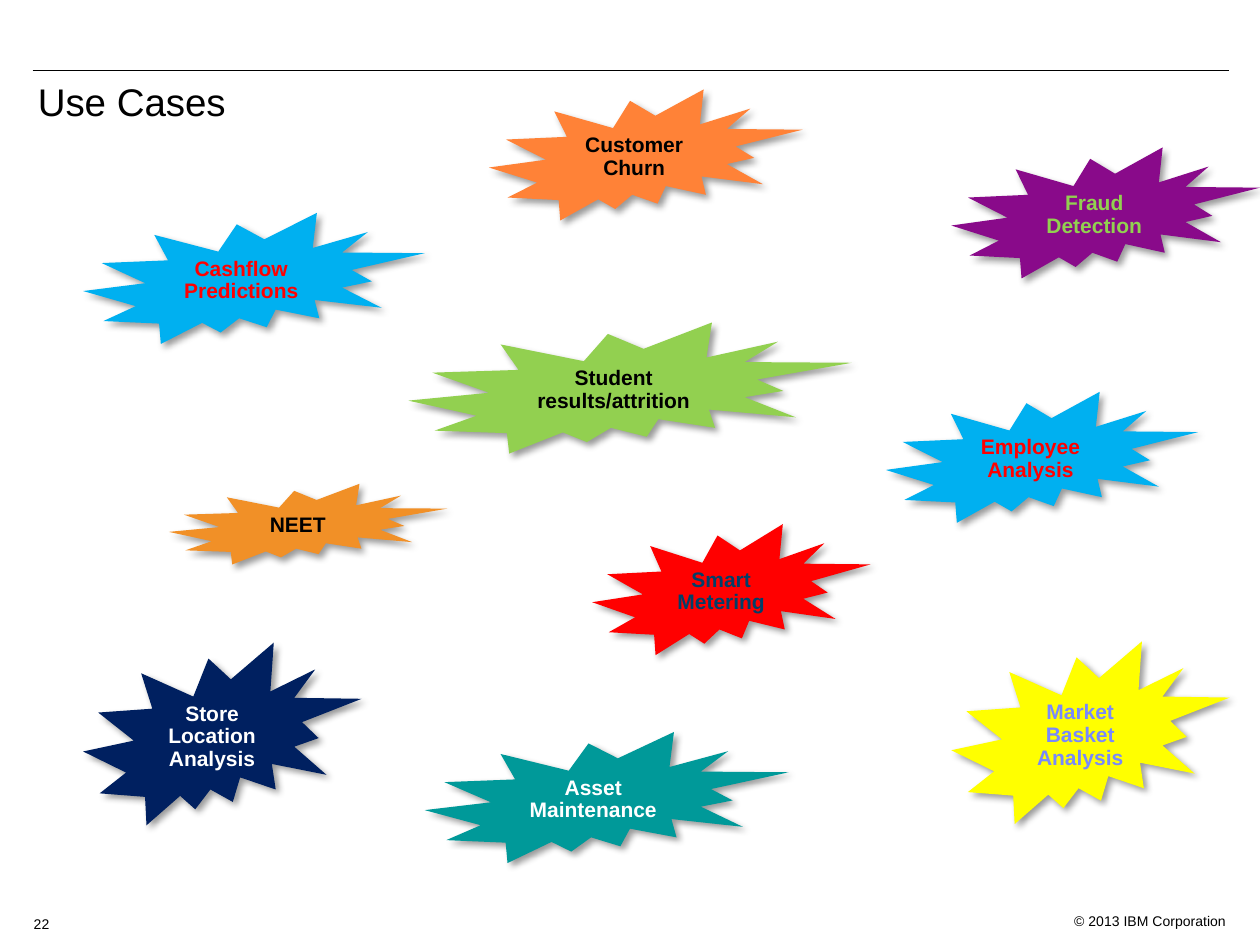
import pptx
import pptx.dml.color
import pptx.enum.shapes
import pptx.enum.text
import pptx.oxml
import pptx.oxml.ns
import pptx.util

ALIGN = pptx.enum.text.PP_ALIGN
ANCHOR = pptx.enum.text.MSO_ANCHOR
COLORS = {
    "black": "000000", "white": "FFFFFF", "red": "FF0000", "sky": "00B0F0",
    "yellow": "FFFF00", "periwinkle": "7889FB", "teal": "009999",
    "orange": "FF8237", "amber": "F19027", "purple": "890A8A",
    "green": "92D050", "navy": "002060", "slate": "003F69",
}
SHADOW = """<a:effectLst %s>
  <a:outerShdw blurRad="50800" dist="38100" dir="2700000" algn="tl" rotWithShape="0">
    <a:srgbClr val="%s"><a:alpha val="40000"/></a:srgbClr>
  </a:outerShdw>
</a:effectLst>"""


def rgb(name):
    return pptx.dml.color.RGBColor.from_string(COLORS[name])


def write(frame, text, *, size, color="black", bold=False, align=ALIGN.LEFT,
          anchor=ANCHOR.TOP, spacing=None):
    """Fill a text frame, one paragraph per line of text."""
    frame.word_wrap = True
    frame.vertical_anchor = anchor
    frame.text = text
    for paragraph in frame.paragraphs:
        paragraph.alignment = align
        paragraph.line_spacing = spacing
        for run in paragraph.runs:
            run.font.name = "Arial"
            run.font.size = pptx.util.Pt(size)
            run.font.bold = bold
            run.font.color.rgb = rgb(color)


class UseCaseSlide:
    """Places elements on a grid of 100 columns by 75 rows."""

    def __init__(self, deck):
        self.column = deck.slide_width / 100
        self.row = deck.slide_height / 75
        self.slide = deck.slides.add_slide(deck.slide_layouts[5])
        self.shapes = self.slide.shapes

    def area(self, left, top, width, height):
        return (round(left * self.column), round(top * self.row),
                round(width * self.column), round(height * self.row))

    def title(self, text, *place):
        heading = self.shapes.title
        heading.left, heading.top, heading.width, heading.height = self.area(*place)
        write(heading.text_frame, text, size=22, spacing=0.9)
        heading.text_frame.auto_size = pptx.enum.text.MSO_AUTO_SIZE.NONE

    def rule(self, left, right, height):
        start_x, y, end_x, _ = self.area(left, height, right, 0)
        rule = self.shapes.add_connector(
            pptx.enum.shapes.MSO_CONNECTOR.STRAIGHT, start_x, y, end_x, y)
        rule.line.color.rgb = rgb("black")
        rule.line.width = pptx.util.Pt(0.75)
        rule._element.spPr.append(
            pptx.oxml.parse_xml("<a:effectLst %s/>" % pptx.oxml.ns.nsdecls("a")))

    def small_print(self, text, align, *place):
        note = self.shapes.add_textbox(*self.area(*place))
        write(note.text_frame, text, size=8, align=align)

    def burst(self, text, fill, color, *place):
        burst = self.shapes.add_shape(
            pptx.enum.shapes.MSO_SHAPE.EXPLOSION2, *self.area(*place))
        burst.fill.solid()
        burst.fill.fore_color.rgb = rgb(fill)
        burst.line.fill.background()
        burst._element.spPr.append(pptx.oxml.parse_xml(
            SHADOW % (pptx.oxml.ns.nsdecls("a"), COLORS["black"])))
        write(burst.text_frame, text, size=12, color=color, bold=True,
              align=ALIGN.CENTER, anchor=ANCHOR.MIDDLE, spacing=0.9)
        burst.text_frame.auto_size = pptx.enum.text.MSO_AUTO_SIZE.SHAPE_TO_FIT_TEXT


# Burst heights in rows, by number of text lines
ONE_LINE, TWO_LINES, THREE_LINES = 6.4, 10.4, 14.5

# Text, fill, text colour, left, top, width, height
USE_CASES = [
    ("Market\nBasket\nAnalysis", "yellow", "periwinkle", 75.5, 50.9, 22.1, THREE_LINES),
    ("Asset\nMaintenance", "teal", "white", 33.7, 58.1, 28.9, TWO_LINES),
    ("Cashflow\nPredictions", "sky", "red", 6.6, 16.9, 27.1, TWO_LINES),
    ("Customer\nChurn", "orange", "black", 38.8, 7.1, 24.9, TWO_LINES),
    ("Smart Metering", "red", "slate", 47, 41.6, 22.1, TWO_LINES),
    ("NEET", "amber", "black", 13.4, 38.4, 22.1, ONE_LINE),
    ("Fraud\nDetection", "purple", "green", 75.5, 11.7, 24.5, TWO_LINES),
    ("Student results/attrition", "green", "black", 32.4, 25.6, 35.2, TWO_LINES),
    ("Store\nLocation\nAnalysis", "navy", "white", 6.6, 51, 22.1, THREE_LINES),
    ("Employee\nAnalysis", "sky", "red", 70.3, 31.1, 24.8, TWO_LINES),
]


def main():
    deck = pptx.Presentation()
    deck.slide_width = pptx.util.Inches(10)
    deck.slide_height = pptx.util.Inches(7.5)
    page = UseCaseSlide(deck)

    # Header and footer
    page.small_print("© 2013 IBM Corporation", ALIGN.RIGHT, 83.3, 71.9, 15, 2)
    page.rule(2.6, 97.5, 5.6)
    page.title("Use Cases", 2, 6.1, 95, 7)
    page.small_print("22", ALIGN.CENTER, 1.3, 72.2, 4, 2)

    # Use cases
    for use_case in USE_CASES:
        page.burst(*use_case)

    deck.save("out.pptx")


if __name__ == "__main__":
    main()
